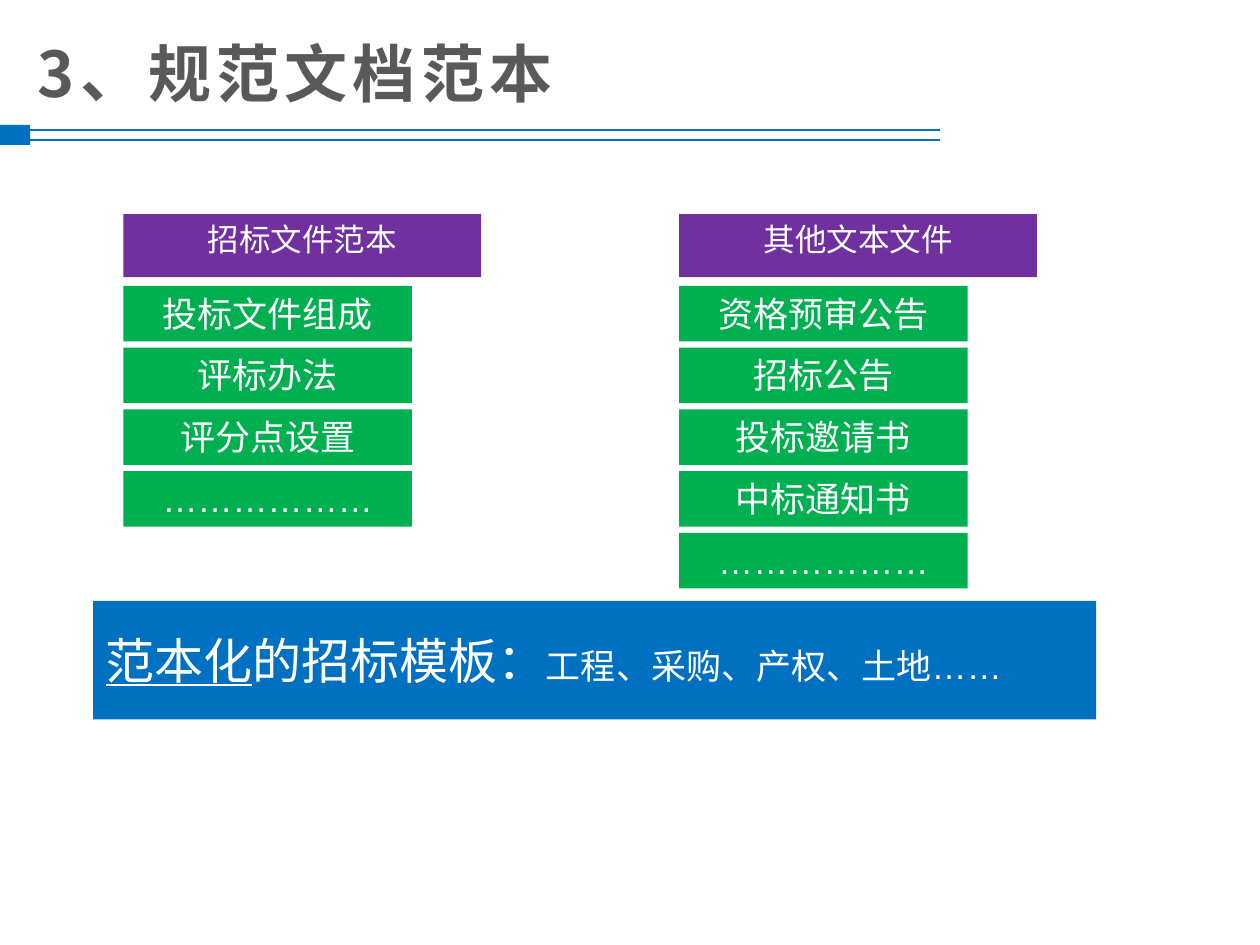
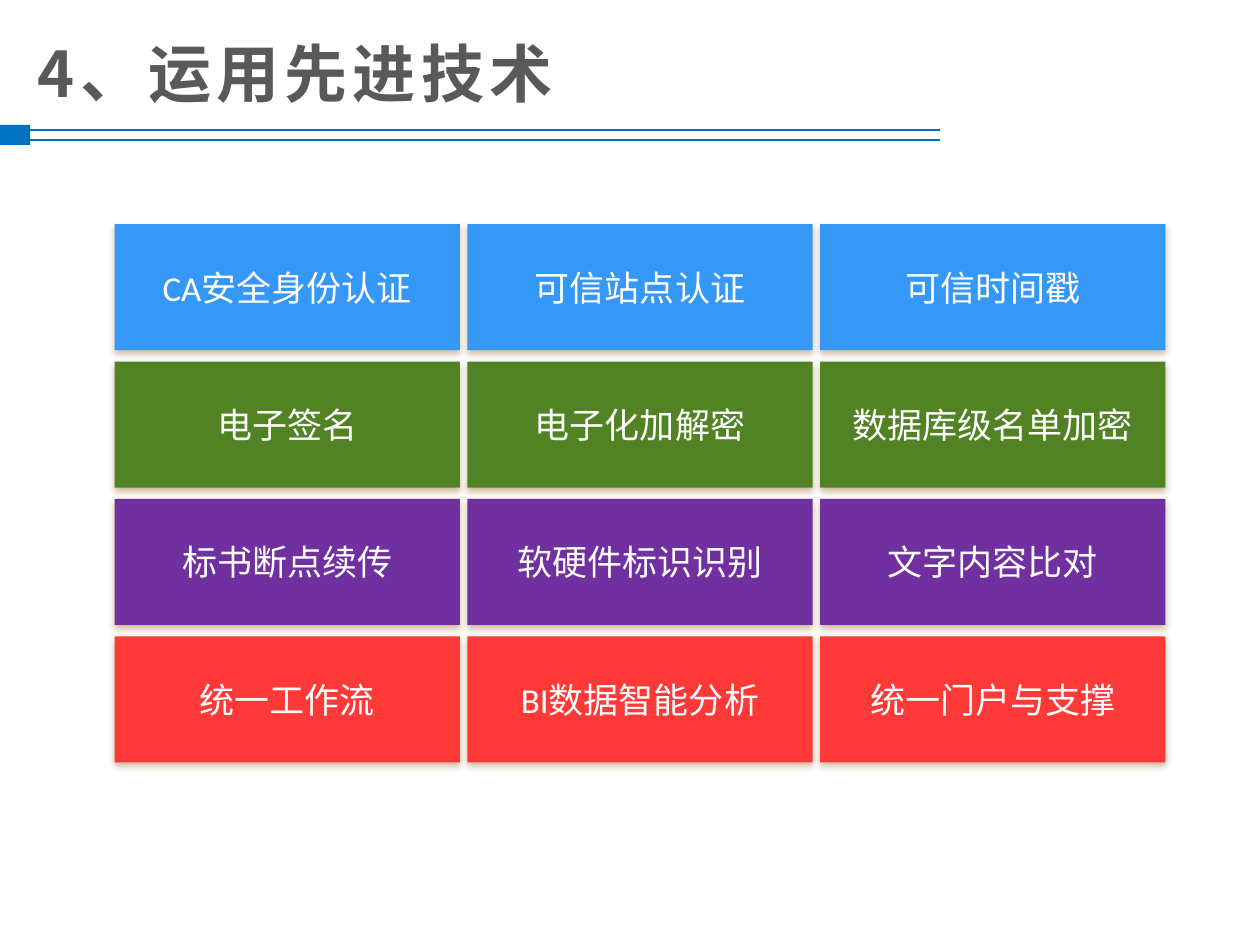
"""Build two slides on document templates and technology for electronic tendering."""
from dataclasses import dataclass
from typing import Any, NamedTuple

from lxml import etree
from pptx import Presentation
from pptx.dml.color import RGBColor
from pptx.enum import shapes, text
from pptx.oxml import ns
from pptx.util import Pt

EMU_PER_PX = 9144


@dataclass(frozen=True)
class Theme:
    """Colours, fonts and type sizes shared by the slides."""

    blue: str = "0070C0"
    purple: str = "7030A0"
    green: str = "00B050"
    sky: str = "3698F6"
    olive: str = "518224"
    red: str = "FF3838"
    white: str = "FFFFFF"
    title_gray: str = "595959"
    shadow: str = "844E00"
    title_font: str = "Noto Sans CJK SC"
    list_font: str = "Arial"
    tile_font: str = "Calibri"
    title_size: int = 36
    lead_size: int = 28
    body_size: int = 20
    heading_size: int = 18
    rule_width: float = 0.9


THEME = Theme()


class Box(NamedTuple):
    """A rectangle in px."""

    left: int
    top: int
    width: int
    height: int


class Run(NamedTuple):
    """A stretch of text with one look."""

    words: str
    size: int
    font: str = THEME.list_font
    color: str = THEME.white
    bold: bool = False
    underline: bool = False
    spacing: int = 0


class TemplateColumn(NamedTuple):
    """A heading with the items stacked below it."""

    left: int
    heading: str
    items: tuple[str, ...]


class TileRow(NamedTuple):
    """A row of equal tiles in one colour."""

    color: str
    labels: tuple[str, ...]


TITLE = Box(20, 22, 731, 71)
TABS = (Box(0, 99, 24, 8), Box(0, 107, 24, 8))
RULE_END = 746
HEADING = Box(0, 170, 284, 50)
ITEM = Box(0, 227, 229, 44)
ITEM_PITCH = 49
BAND = Box(74, 477, 796, 94)
TILE = Box(91, 178, 274, 100)
TILE_PITCH_X, TILE_PITCH_Y = 280, 109

COLUMNS = (
    TemplateColumn(98, "招标文件范本", ("投标文件组成", "评标办法", "评分点设置", "………………")),
    TemplateColumn(539, "其他文本文件", ("资格预审公告", "招标公告", "投标邀请书", "中标通知书", "………………")),
)
BAND_RUNS = (
    Run("范本化", THEME.lead_size, underline=True),
    Run("的招标模板：", THEME.lead_size),
    Run("工程、采购、产权、土地……", THEME.body_size),
)
TILE_ROWS = (
    TileRow(THEME.sky, ("CA安全身份认证", "可信站点认证", "可信时间戳")),
    TileRow(THEME.olive, ("电子签名", "电子化加解密", "数据库级名单加密")),
    TileRow(THEME.purple, ("标书断点续传", "软硬件标识识别", "文字内容比对")),
    TileRow(THEME.red, ("统一工作流", "BI数据智能分析", "统一门户与支撑")),
)


def px(length: int) -> int:
    """Turn px into EMU."""
    return length * EMU_PER_PX


def apply_format(target: Any, values: dict[str, Any]) -> None:
    """Set each named attribute on the target."""
    for name, value in values.items():
        setattr(target, name, value)


def write_runs(shape: Any, runs: tuple[Run, ...], align: Any, anchor: Any) -> None:
    """Write one paragraph of formatted runs into a shape."""
    apply_format(shape.text_frame, {
        "word_wrap": True,
        "auto_size": text.MSO_AUTO_SIZE.NONE,
        "vertical_anchor": anchor,
    })
    paragraph = shape.text_frame.paragraphs[0]
    paragraph.alignment = align
    for item in runs:
        run = paragraph.add_run()
        run.text = item.words
        apply_format(run.font, {
            "name": item.font,
            "size": Pt(item.size),
            "bold": item.bold,
            "underline": item.underline,
        })
        run.font.color.rgb = RGBColor.from_string(item.color)
        properties = run._r.get_or_add_rPr()
        etree.SubElement(properties, ns.qn("a:ea"), typeface=item.font)
        if item.spacing:
            properties.set("spc", str(item.spacing * 100))


def add_block(parent: Any, box: Box, color: str,
              kind: Any = shapes.MSO_SHAPE.RECTANGLE) -> Any:
    """Add a filled shape without outline or shadow."""
    shape = parent.shapes.add_shape(kind, *map(px, box))
    shape.shadow.inherit = False
    shape.fill.solid()
    shape.fill.fore_color.rgb = RGBColor.from_string(color)
    shape.line.fill.background()
    return shape


def add_label(slide: Any, box: Box, color: str, words: str, size: int) -> None:
    """Add a block with centred text at its top."""
    write_runs(add_block(slide, box, color), (Run(words, size),),
               text.PP_ALIGN.CENTER, text.MSO_ANCHOR.TOP)


def add_rule(slide: Any, tab_box: Box) -> None:
    """Add a tab at the left edge and the line that ends at it."""
    tab = add_block(slide, tab_box, THEME.blue)
    middle = px(tab_box.top + tab_box.height // 2)
    line = slide.shapes.add_connector(
        shapes.MSO_CONNECTOR.STRAIGHT, px(RULE_END), middle, px(tab_box.width), middle)
    line.end_connect(tab, 3)
    line.line.color.rgb = RGBColor.from_string(THEME.blue)
    line.line.width = Pt(THEME.rule_width)
    etree.SubElement(line._element.spPr, ns.qn("a:effectLst"))


def add_titled_slide(presentation: Any, words: str) -> Any:
    """Add a slide with the shared title and double rule."""
    slide = presentation.slides.add_slide(presentation.slide_layouts[5])
    for tab_box in TABS:
        add_rule(slide, tab_box)
    title = slide.shapes.title
    apply_format(title, {name: px(value) for name, value in TITLE._asdict().items()})
    run = Run(words, THEME.title_size, THEME.title_font, THEME.title_gray, bold=True, spacing=3)
    write_runs(title, (run,), text.PP_ALIGN.LEFT, text.MSO_ANCHOR.MIDDLE)
    return slide


def add_template_column(slide: Any, column: TemplateColumn) -> None:
    """Add a heading and its stack of items."""
    add_label(slide, HEADING._replace(left=column.left), THEME.purple,
              column.heading, THEME.heading_size)
    for index, words in enumerate(column.items):
        box = ITEM._replace(left=column.left, top=ITEM.top + index * ITEM_PITCH)
        add_label(slide, box, THEME.green, words, THEME.body_size)


def add_drop_shadow(shape: Any) -> None:
    """Give a shape a soft shadow straight below it."""
    effects = shape._element.spPr.find(ns.qn("a:effectLst"))
    shadow = etree.SubElement(
        effects, ns.qn("a:outerShdw"), blurRad=str(Pt(4)), dist=str(Pt(2)),
        dir="5400000", rotWithShape="0")
    color = etree.SubElement(shadow, ns.qn("a:srgbClr"), val=THEME.shadow)
    etree.SubElement(color, ns.qn("a:alpha"), val="38000")


def add_tile_row(slide: Any, index: int, row: TileRow) -> None:
    """Add one grouped row of tiles."""
    group = slide.shapes.add_group_shape()
    for column, words in enumerate(row.labels):
        box = TILE._replace(left=TILE.left + column * TILE_PITCH_X,
                            top=TILE.top + index * TILE_PITCH_Y)
        tile = add_block(group, box, row.color, shapes.MSO_SHAPE.ROUNDED_RECTANGLE)
        tile.adjustments[0] = 0
        add_drop_shadow(tile)
        write_runs(tile, (Run(words, THEME.body_size, THEME.tile_font),),
                   text.PP_ALIGN.CENTER, text.MSO_ANCHOR.MIDDLE)


def build_templates_slide(presentation: Any) -> None:
    """Build the slide on standard document templates."""
    slide = add_titled_slide(presentation, "3、规范文档范本")
    for column in COLUMNS:
        add_template_column(slide, column)
    write_runs(add_block(slide, BAND, THEME.blue), BAND_RUNS,
               text.PP_ALIGN.LEFT, text.MSO_ANCHOR.MIDDLE)


def build_technology_slide(presentation: Any) -> None:
    """Build the slide on advanced technology."""
    slide = add_titled_slide(presentation, "4、运用先进技术")
    for index, row in enumerate(TILE_ROWS):
        add_tile_row(slide, index, row)


def main() -> None:
    """Build and save the presentation."""
    presentation = Presentation()
    apply_format(presentation, {"slide_width": px(1000), "slide_height": px(750)})
    build_templates_slide(presentation)
    build_technology_slide(presentation)
    presentation.save("out.pptx")


if __name__ == "__main__":
    main()
